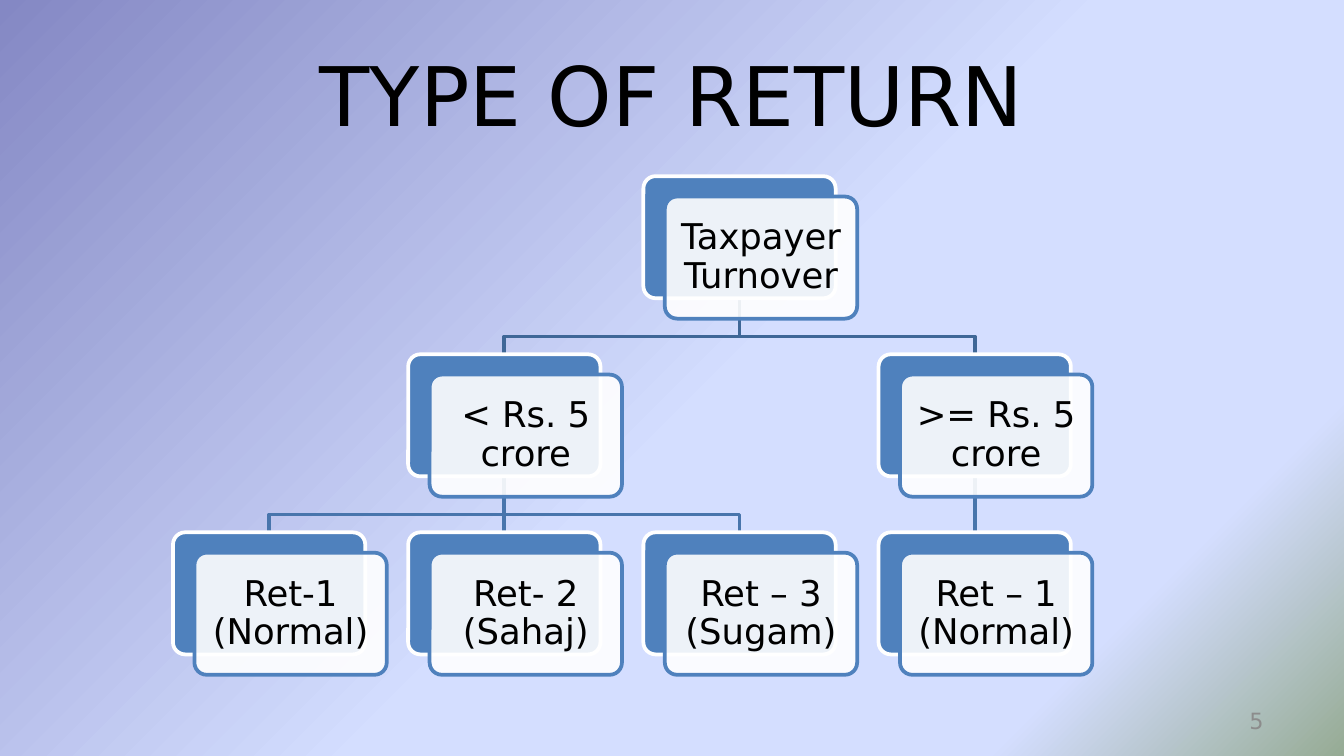
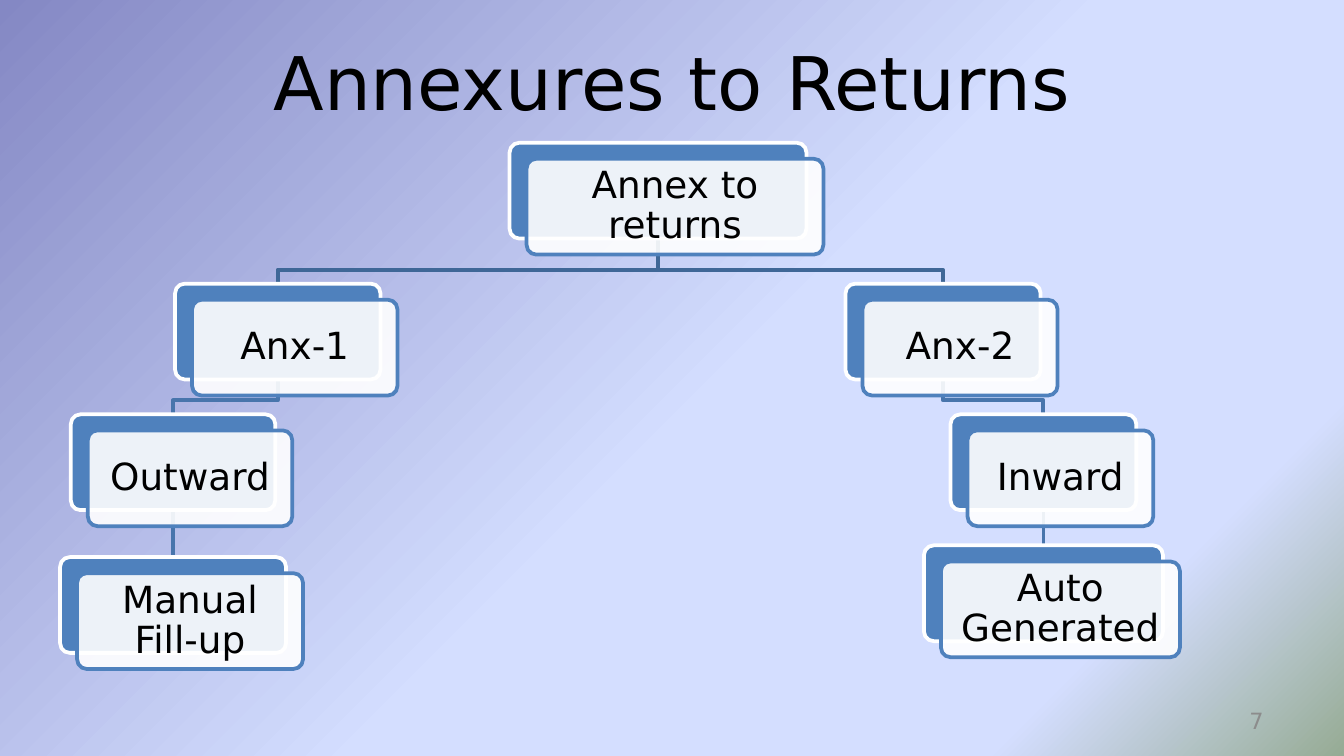
from dataclasses import dataclass
from typing import Optional

from lxml import etree
from pptx import Presentation
from pptx.dml.color import RGBColor
from pptx.enum.shapes import MSO_CONNECTOR as CONN, MSO_SHAPE as SHAPE
from pptx.enum.text import MSO_ANCHOR as ANCHOR, MSO_AUTO_SIZE as AUTO, PP_ALIGN as ALIGN
from pptx.oxml.ns import qn
from pptx.util import Pt

FONT = "DejaVu Sans"
BLACK = RGBColor(0x00, 0x00, 0x00)
WHITE = RGBColor(0xFF, 0xFF, 0xFF)
GREY = RGBColor(0x8C, 0x8C, 0x8C)
BLUE = RGBColor(0x4F, 0x81, 0xBD)
ROOT_LINE = RGBColor(0x3F, 0x67, 0x97)
LOWER_LINE = RGBColor(0x48, 0x75, 0xAC)
BACKGROUND_STOPS = (
    (0, RGBColor(0x84, 0x88, 0xC4)),
    (53, RGBColor(0xD4, 0xDE, 0xFF)),
    (83, RGBColor(0xD4, 0xDE, 0xFF)),
    (100, RGBColor(0x96, 0xAB, 0x94)),
)
LINE_WIDTH = Pt(2)
CARD_INSET = Pt(5.7)


@dataclass
class Node:
    text: str
    center: float
    top: float
    width: float
    parent: Optional["Node"] = None


@dataclass
class ChartStyle:
    height: float
    shift_x: float
    shift_y: float
    bend: float  # distance of a branch's horizontal run above the child
    size: float


def set_background(master):
    fill = master.background.fill
    fill.gradient()
    fill.gradient_angle = 315
    stops = master.element.find(".//" + qn("p:bgPr")).find(".//" + qn("a:gsLst"))
    for stop in list(stops):
        stops.remove(stop)
    for position, color in BACKGROUND_STOPS:
        stop = etree.SubElement(stops, qn("a:gs"), pos=str(position * 1000))
        etree.SubElement(stop, qn("a:srgbClr"), val=str(color))


def write(sp, text, size, color=BLACK, align=ALIGN.CENTER, spacing=None, inset=None):
    tf = sp.text_frame
    tf.word_wrap = True
    tf.auto_size = AUTO.NONE
    tf.vertical_anchor = ANCHOR.MIDDLE
    if inset is not None:
        tf.margin_left = tf.margin_top = tf.margin_right = tf.margin_bottom = inset
    p = tf.paragraphs[0]
    p.alignment = align
    p.line_spacing = spacing
    r = p.add_run()
    r.text = text
    r.font.name = FONT
    r.font.size = Pt(size)
    r.font.color.rgb = color


def add_slide(prs, title, title_size, title_height, number):
    slide = prs.slides.add_slide(prs.slide_layouts[5])
    sp = slide.shapes.title
    sp.left, sp.top, sp.width, sp.height = Pt(36), Pt(16.5), Pt(648), Pt(title_height)
    write(sp, title, title_size)
    box = slide.shapes.add_textbox(Pt(516), Pt(375.3), Pt(168), Pt(21.6))
    write(box, number, 12, color=GREY, align=ALIGN.RIGHT)
    return slide


def add_card(slide, left, top, width, height, fill, outline, alpha=None):
    sp = slide.shapes.add_shape(SHAPE.ROUNDED_RECTANGLE, Pt(left), Pt(top), Pt(width), Pt(height))
    sp.adjustments[0] = 0.1
    sp.shadow.inherit = False
    sp.fill.solid()
    sp.fill.fore_color.rgb = fill
    sp.line.color.rgb = outline
    sp.line.width = LINE_WIDTH
    if alpha is not None:
        color = sp.fill._xPr.find(qn("a:solidFill")).find(qn("a:srgbClr"))
        etree.SubElement(color, qn("a:alpha"), val=str(alpha * 1000))
    return sp


def add_node(slide, node, style):
    """Draw a node as a blue card under a shifted text card; return the blue one."""
    left = node.center - node.width / 2
    back = add_card(slide, left, node.top, node.width, style.height, BLUE, WHITE)
    front = add_card(slide, left + style.shift_x, node.top + style.shift_y,
                     node.width, style.height, WHITE, BLUE, alpha=90)
    write(front, node.text, style.size, spacing=0.9, inset=CARD_INSET)
    return back


def add_straight(slide, x, top, bottom):
    line = slide.shapes.add_connector(CONN.STRAIGHT, Pt(x), Pt(top), Pt(x), Pt(bottom))
    return line


def add_elbow(slide, points):
    start, *rest = [(Pt(x), Pt(y)) for x, y in points]
    builder = slide.shapes.build_freeform(*start)
    builder.add_line_segments(rest, close=False)
    sp = builder.convert_to_shape()
    sp.fill.background()
    sp.shadow.inherit = False
    return sp


def add_branch(slide, node, style):
    """Link a node to its parent; return the connector if the link is straight."""
    parent = node.parent
    bottom = parent.top + style.height
    straight = parent.center == node.center
    if straight:
        link = add_straight(slide, node.center, bottom, node.top)
    else:
        bend = node.top - style.bend
        link = add_elbow(slide, [(parent.center, bottom), (parent.center, bend),
                                 (node.center, bend), (node.center, node.top)])
    link.line.color.rgb = LOWER_LINE if parent.parent else ROOT_LINE
    link.line.width = LINE_WIDTH
    if straight:
        etree.SubElement(link._element.spPr, qn("a:effectLst"))
        return link
    return None


def add_hierarchy(slide, nodes, style):
    """Draw the links first so that the cards lie over them."""
    links = [(node, add_branch(slide, node, style)) for node in nodes if node.parent]
    cards = {id(node): add_node(slide, node, style) for node in nodes}
    for node, link in links:
        if link is not None:
            link.begin_connect(cards[id(node.parent)], 2)
            link.end_connect(cards[id(node)], 0)


def return_nodes():
    width = 103
    columns = [144.2 + 126 * i for i in range(4)]
    rows = [94.4 + 95.4 * i for i in range(3)]
    root = Node("Taxpayer Turnover", columns[2], rows[0], width)
    small = Node("< Rs. 5 crore", columns[1], rows[1], width, root)
    large = Node(">= Rs. 5 crore", columns[3], rows[1], width, root)
    forms = [("Ret-1 (Normal)", small), ("Ret- 2 (Sahaj)", small),
             ("Ret – 3 (Sugam)", small), ("Ret – 1 (Normal)", large)]
    leaves = [Node(text, x, rows[2], width, parent)
              for x, (text, parent) in zip(columns, forms)]
    return [root, small, large, *leaves]


def annexure_nodes():
    root = Node("Annex to returns", 352.5, 76.5, 159)
    anx_1 = Node("Anx-1", 148.8, 152, 110, root)
    outward = Node("Outward", 92.7, 222, 109.5, anx_1)
    manual = Node("Manual Fill-up", 92.7, 298.5, 121, outward)
    anx_2 = Node("Anx-2", 505.2, 152, 104.5, root)
    inward = Node("Inward", 559, 222, 99.5, anx_2)
    auto = Node("Auto Generated", 559, 292.2, 128, inward)
    return [root, anx_1, outward, manual, anx_2, inward, auto]


def main():
    prs = Presentation()
    prs.slide_width, prs.slide_height = Pt(720), Pt(405)
    set_background(prs.slide_master)

    slide = add_slide(prs, "TYPE OF RETURN", 44, 67.5, "5")
    add_hierarchy(slide, return_nodes(), ChartStyle(65.4, 11.5, 10.9, 9.5, 19))

    slide = add_slide(prs, "Annexures to Returns", 39.6, 54, "7")
    add_hierarchy(slide, annexure_nodes(), ChartStyle(51.3, 9.1, 8.6, 7.5, 20))

    prs.save("out.pptx")


if __name__ == "__main__":
    main()
